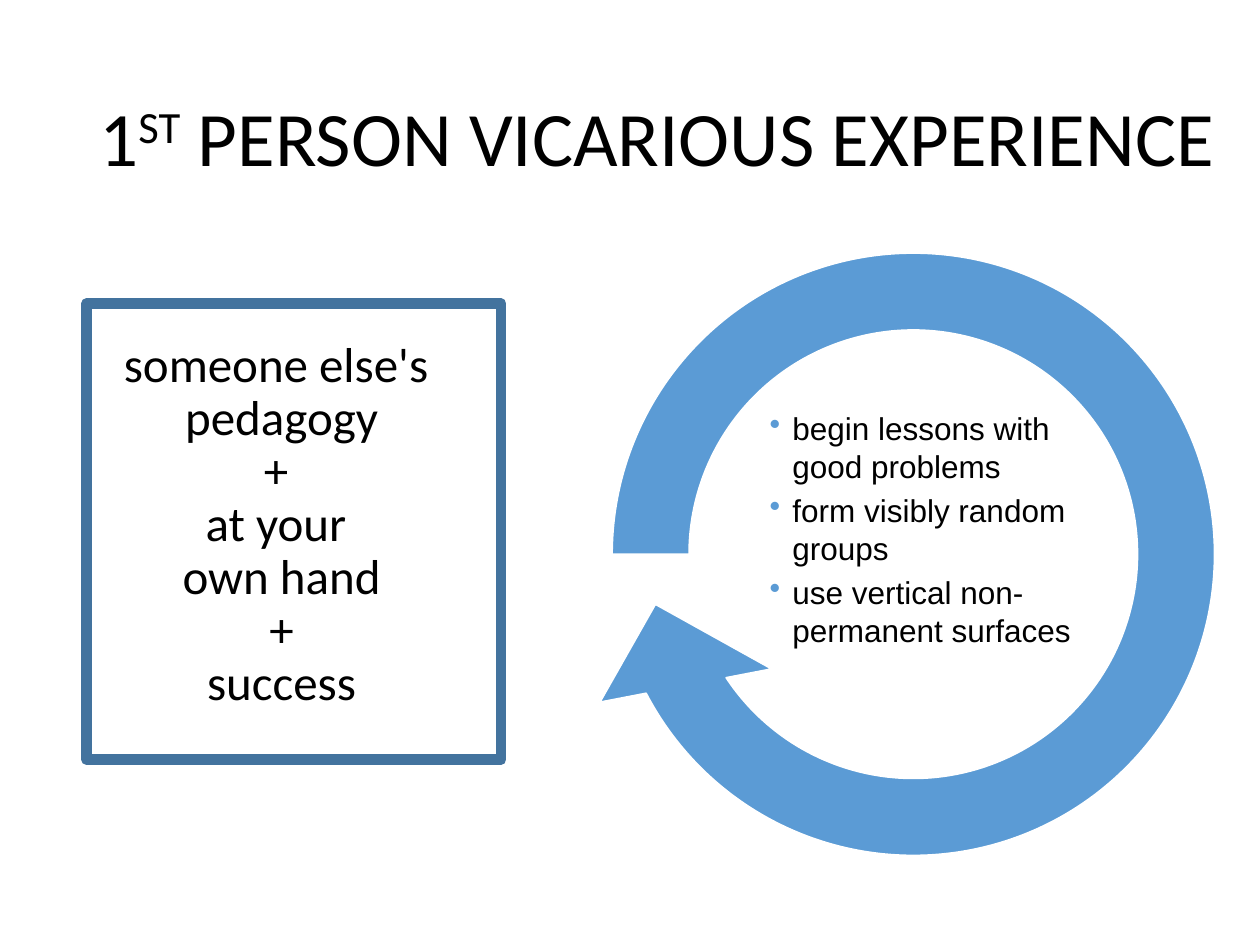
"""Build the slide on first person vicarious experience."""
from pptx import Presentation
from pptx import util as u
from pptx.dml.color import RGBColor
from pptx.enum import shapes, text
from pptx.oxml import parse_xml
from pptx.oxml.ns import nsdecls

HUES = {"ink": "000000", "blue": "5B9BD5", "frame": "43739E", "white": "FFFFFF"}
LEFT, MID = text.PP_ALIGN.LEFT, text.PP_ALIGN.CENTER


def hue(name):
    return RGBColor.from_string(HUES[name])


def apply(item, vals):
    for key, val in vals.items():
        setattr(item, key, val)


class Deck:
    def __init__(self):
        self.prs = Presentation()
        apply(self.prs, {"slide_width": u.Pt(720), "slide_height": u.Pt(540)})
        self.slide = self.prs.slides.add_slide(self.prs.slide_layouts[1])

    def place(self, shape, box):
        names = ("left", "top", "width", "height")
        apply(shape, dict(zip(names, map(u.Pt, box))))

    def frame(self, shape, anchor):
        vals = {"word_wrap": True, "auto_size": text.MSO_AUTO_SIZE.NONE,
                "vertical_anchor": anchor}
        apply(shape.text_frame, vals)
        return shape.text_frame

    def run(self, para, words, size, face, base=0):
        run = para.add_run()
        apply(run, {"text": words})
        apply(run.font, {"size": u.Pt(size), "name": face})
        run.font.color.rgb = hue("ink")
        if base:
            run.font._element.set("baseline", str(base * 1000))

    def title(self, parts, box):
        shape = self.slide.shapes.title
        self.place(shape, box)
        para = self.frame(shape, text.MSO_ANCHOR.MIDDLE).paragraphs[0]
        apply(para, {"alignment": LEFT, "line_spacing": 0.9})
        for words, base in parts:
            self.run(para, words, 44, "Calibri", base)

    def lines(self, frame, rows, size, face, form, mark=None):
        for i, words in enumerate(rows):
            para = frame.add_paragraph() if i else frame.paragraphs[0]
            apply(para, form)
            self.run(para, words, size, face)
            self.bullet(para, mark)

    def bullet(self, para, mark):
        props = para._p.get_or_add_pPr()
        pad = u.Pt(13) if mark else 0
        props.set("marL", str(pad))
        props.set("indent", str(-pad))
        tags = [f'<a:buClr {nsdecls("a")}><a:srgbClr val="{HUES["blue"]}"/></a:buClr>',
                f'<a:buChar {nsdecls("a")} char="{mark}"/>']
        for tag in tags if mark else [f'<a:buNone {nsdecls("a")}/>']:
            props.append(parse_xml(tag))

    def body(self, rows, box):
        shape = self.slide.placeholders[1]
        self.place(shape, box)
        form = {"alignment": MID, "line_spacing": 0.9, "space_before": u.Pt(0)}
        self.lines(self.frame(shape, text.MSO_ANCHOR.TOP), rows, 28, "Calibri", form)

    def list(self, rows, box):
        shape = self.slide.shapes.add_textbox(*map(u.Pt, box))
        form = {"alignment": LEFT, "space_before": u.Pt(3.6)}
        frame = self.frame(shape, text.MSO_ANCHOR.TOP)
        self.lines(frame, rows, 18, "Arial", form, "•")

    def shape(self, kind, box, line, width, fill=None, bends=()):
        shape = self.slide.shapes.add_shape(kind, *map(u.Pt, box))
        shape.shadow.inherit = False
        for i, val in enumerate(bends):
            shape.adjustments[i] = val
        if fill:
            shape.fill.solid()
            shape.fill.fore_color.rgb = hue(fill)
        else:
            shape.fill.background()
        shape.line.color.rgb = hue(line)
        shape.line.width = u.Pt(width)


def main():
    deck = Deck()
    kinds = shapes.MSO_SHAPE
    deck.title([("1", 0), ("ST", 30), (" PERSON VICARIOUS EXPERIENCE", 0)],
               (49.5, 28.8, 656.6, 104.4))
    deck.body(["someone else's ", "pedagogy", "+ ", "at your ", "own hand", "+",
               "success"], (0, 190.8, 321.8, 301.7))
    deck.shape(kinds.CIRCULAR_ARROW, (321.8, 116.6, 400.3, 400.3), "white", 1,
               "blue", (0.11, 11.42, 90, 108, 0.125))
    deck.list(["begin lessons with good problems", "form visibly random groups",
               "use vertical non-permanent surfaces"], (432.7, 230.4, 192.2, 152.6))
    deck.shape(kinds.RECTANGLE, (49.5, 173.5, 236.9, 260.6), "frame", 6)
    deck.prs.save("out.pptx")


if __name__ == "__main__":
    main()
